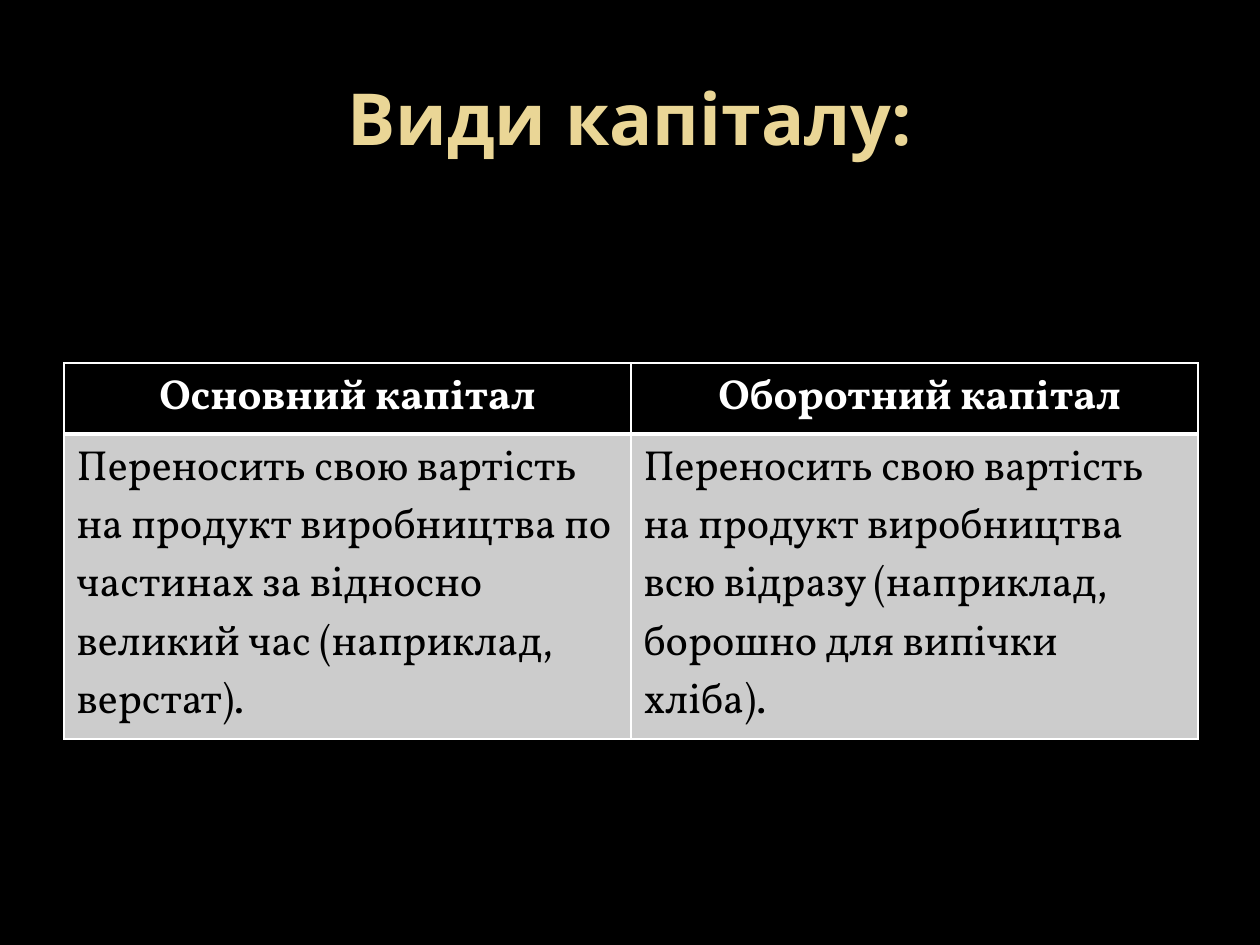
from lxml import etree
from pptx import Presentation
from pptx import util as u
from pptx.dml.color import RGBColor
from pptx.enum import text
from pptx.oxml.ns import qn

PX = 914400 // 126


def style(para, font, size, color, bold):
    for span in para.runs:
        span.font.name = font
        span.font.size = u.Pt(size)
        span.font.bold = bold
        span.font.color.rgb = RGBColor.from_string(color)


def add_border(cell, position, side, width):
    line = etree.Element(qn(f"a:ln{side}"), w=str(u.Pt(width)))
    fill = etree.SubElement(line, qn("a:solidFill"))
    etree.SubElement(fill, qn("a:srgbClr"), val="FFFFFF")
    cell._tc.get_or_add_tcPr().insert(position, line)


# Page
deck = Presentation()
deck.slide_width, deck.slide_height = 1260 * PX, 945 * PX
page = deck.slides.add_slide(deck.slide_layouts[6])
page.background.fill.solid()
page.background.fill.fore_color.rgb = RGBColor.from_string("000000")

# Title
title = page.shapes.add_textbox(63 * PX, 38 * PX, 1134 * PX, 158 * PX)
title.text_frame.word_wrap = True
title.text_frame.vertical_anchor = text.MSO_ANCHOR.MIDDLE
title.text_frame.text = "Види капіталу:"
para = title.text_frame.paragraphs[0]
para.alignment = text.PP_ALIGN.CENTER
style(para, "Noto Sans", 41, "EAD696", True)

# Table of the two kinds of capital
rows = [
    ("Основний капітал", "Оборотний капітал"),
    ("Переносить свою вартість на продукт виробництва по частинах за відносно великий час (наприклад, верстат).",
     "Переносить свою вартість на продукт виробництва всю відразу (наприклад, борошно для випічки хліба)."),
]
heights = [71, 305]
table = page.shapes.add_table(2, 2, 64 * PX, 363 * PX, 1134 * PX, sum(heights) * PX).table
for r, words in enumerate(rows):
    header = r == 0
    table.rows[r].height = heights[r] * PX
    for c, word in enumerate(words):
        cell = table.cell(r, c)
        cell.text = word
        para = cell.text_frame.paragraphs[0]
        para.alignment = text.PP_ALIGN.CENTER if header else text.PP_ALIGN.LEFT
        style(para, "Vollkorn", 24, "FFFFFF" if header else "000000", header)
        cell.fill.solid()
        cell.fill.fore_color.rgb = RGBColor.from_string("000000" if header else "CCCCCC")
        # The rule below the header is thicker
        widths = {"L": 1, "R": 1, "T": 1 if header else 3, "B": 3 if header else 1}
        for position, (side, width) in enumerate(widths.items()):
            add_border(cell, position, side, width)

# The second heading sits slightly right of centre
table.cell(0, 1).margin_left = 23 * PX

deck.save("out.pptx")
